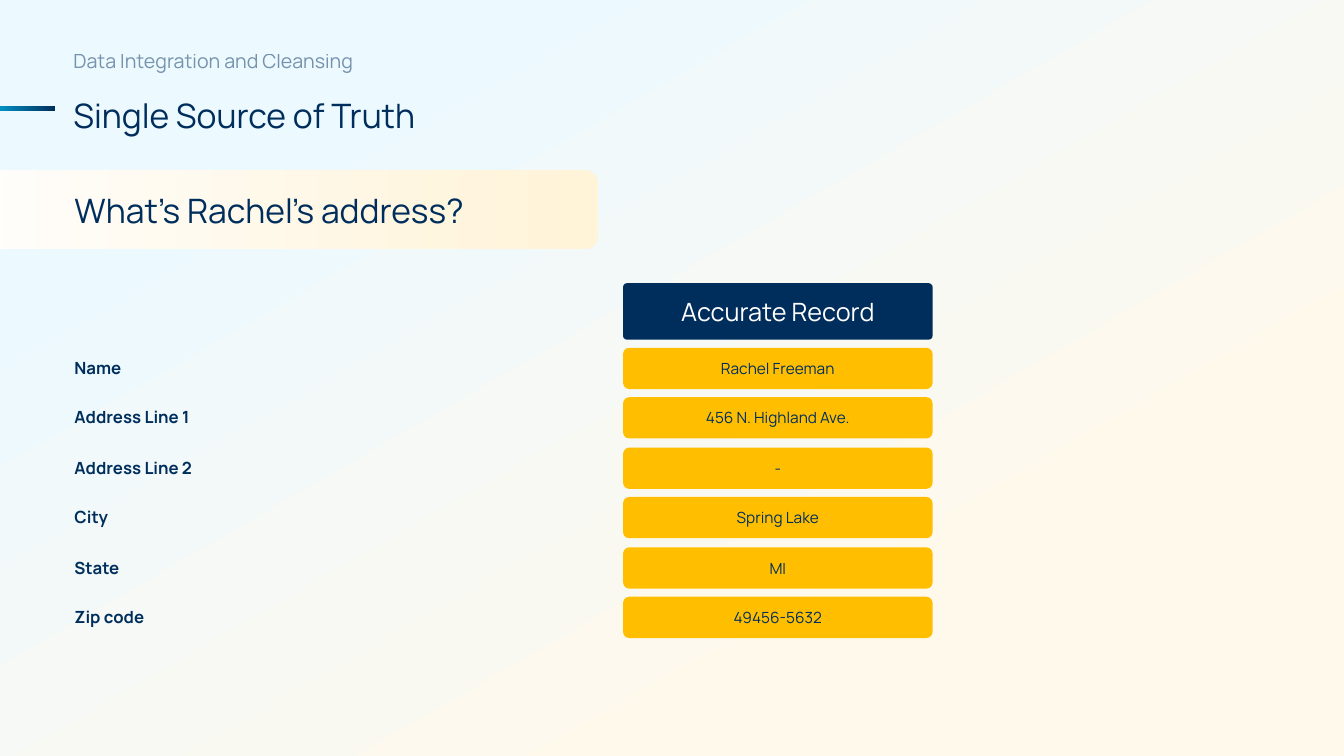
from dataclasses import dataclass
from typing import Any

from lxml import etree
from pptx import Presentation
from pptx.dml.color import RGBColor
from pptx.enum.shapes import MSO_SHAPE
from pptx.enum.text import MSO_ANCHOR, MSO_AUTO_SIZE, PP_ALIGN
from pptx.oxml.ns import qn
from pptx.util import Pt

RECT, ROUND = MSO_SHAPE.RECTANGLE, MSO_SHAPE.ROUNDED_RECTANGLE
TOP, MIDDLE = MSO_ANCHOR.TOP, MSO_ANCHOR.MIDDLE
LEFT, CENTER = PP_ALIGN.LEFT, PP_ALIGN.CENTER
FIT_SHAPE = MSO_AUTO_SIZE.SHAPE_TO_FIT_TEXT

EMU_PER_PX = 9144
SLIDE_W, SLIDE_H = 1333, 750
FONT = "Manrope"
COLORS = {
    "navy": "002E5C",
    "cyan": "00C9FF",
    "ice": "ECF9FF",
    "cream": "FFF9EC",
    "sand": "FFF3D8",
    "amber": "FFBF00",
    "white": "FFFFFF",
}
HEADING = {"line_spacing": 1.3, "space_before": Pt(3), "space_after": Pt(3)}


@dataclass(frozen=True)
class Box:
    x: int
    y: int
    w: int
    h: int

    def emu(self) -> tuple[int, ...]:
        return tuple(v * EMU_PER_PX for v in (self.x, self.y, self.w, self.h))


@dataclass(frozen=True)
class Gradient:
    start: tuple[float, str]
    end: tuple[float, str]
    clockwise: int = 0


@dataclass(frozen=True)
class Field:
    label: str
    label_w: int
    value: str


FIELDS = [
    Field("Name", 72, "Rachel Freeman"),
    Field("Address Line 1", 141, "456 N. Highland Ave."),
    Field("Address Line 2", 144, "-"),
    Field("City", 55, "Spring Lake"),
    Field("State", 66, "MI"),
    Field("Zip code", 93, "49456-5632"),
]
FIRST_ROW, LAST_ROW = 345, 592
COLUMN_X, COLUMN_W = 618, 307


def rgb(name: str) -> RGBColor:
    return RGBColor.from_string(COLORS[name])


def apply(target: Any, values: dict[str, Any]) -> None:
    for key, value in values.items():
        setattr(target, key, value)


def write(sp: Any, text: str, size: int, color: str = "navy",
          bold: bool = False, frame: dict[str, Any] | None = None,
          para: dict[str, Any] | None = None) -> Any:
    tf = sp.text_frame
    apply(tf, {"word_wrap": True, "vertical_anchor": TOP, **(frame or {})})
    p = tf.paragraphs[0]
    apply(p, {"alignment": LEFT, **(para or {})})
    r = p.add_run()
    r.text = text
    apply(r.font, {"name": FONT, "size": Pt(size), "bold": bold})
    r.font.color.rgb = rgb(color)
    return r


def add_block(slide: Any, box: Box, kind: Any, fill: str | Gradient,
              radius: float | None = None) -> Any:
    sp = slide.shapes.add_shape(kind, *box.emu())
    sp.shadow.inherit = False
    sp.line.fill.background()
    if radius is not None:
        sp.adjustments[0] = radius
    if isinstance(fill, Gradient):
        sp.fill.gradient()
        sp.fill.gradient_angle = (360 - fill.clockwise) % 360
        for stop, (position, color) in zip(sp.fill.gradient_stops, (fill.start, fill.end)):
            stop.color.rgb = rgb(color)
            stop.position = position
    else:
        sp.fill.solid()
        sp.fill.fore_color.rgb = rgb(fill)
    return sp


def add_text(slide: Any, box: Box, text: str, size: int, **options: Any) -> Any:
    return write(slide.shapes.add_textbox(*box.emu()), text, size, **options)


def add_cell(slide: Any, box: Box, text: str, size: int, fill: str,
             color: str, radius: float) -> None:
    sp = add_block(slide, box, ROUND, fill, radius)
    write(sp, text, size, color, frame={"vertical_anchor": MIDDLE},
          para={"alignment": CENTER})


def set_alpha(r: Any, percent: int) -> None:
    for clr in r.font._element.iter(qn("a:srgbClr")):
        etree.SubElement(clr, qn("a:alpha"), val=str(percent * 1000))


def add_heading(slide: Any) -> None:
    add_block(slide, Box(0, -11, SLIDE_W, 778), RECT,
              Gradient((0.18, "ice"), (0.75, "cream"), 60))
    r = add_text(slide, Box(63, 37, 558, 51), "Data Integration and Cleansing", 14,
                 para=HEADING)
    set_alpha(r, 50)
    add_text(slide, Box(63, 77, 576, 51), "Single Source of Truth", 24, para=HEADING)
    add_block(slide, Box(-31, 105, 86, 5), RECT, Gradient((0, "cyan"), (1, "navy")))


def add_question(slide: Any) -> None:
    add_block(slide, Box(-102, 169, 695, 78), ROUND,
              Gradient((0, "white"), (1, "sand")), 0.167)
    add_text(slide, Box(64, 183, 538, 51), "What’s Rachel’s address?", 24,
             frame={"vertical_anchor": MIDDLE})


def add_record(slide: Any) -> None:
    add_cell(slide, Box(COLUMN_X, 281, COLUMN_W, 56), "Accurate Record", 18,
             "navy", "white", 0.068)
    pitch = (LAST_ROW - FIRST_ROW) / (len(FIELDS) - 1)
    for i, field in enumerate(FIELDS):
        y = FIRST_ROW + round(i * pitch)
        add_text(slide, Box(64, y + 5, field.label_w, 30), field.label, 12, bold=True,
                 frame={"word_wrap": False, "auto_size": FIT_SHAPE})
        add_cell(slide, Box(COLUMN_X, y, COLUMN_W, 41), field.value, 11,
                 "amber", "navy", 0.148)


def main() -> None:
    prs = Presentation()
    prs.slide_width = SLIDE_W * EMU_PER_PX
    prs.slide_height = SLIDE_H * EMU_PER_PX
    slide = prs.slides.add_slide(prs.slide_layouts[6])
    add_heading(slide)
    add_question(slide)
    add_record(slide)
    prs.save("out.pptx")


if __name__ == "__main__":
    main()
